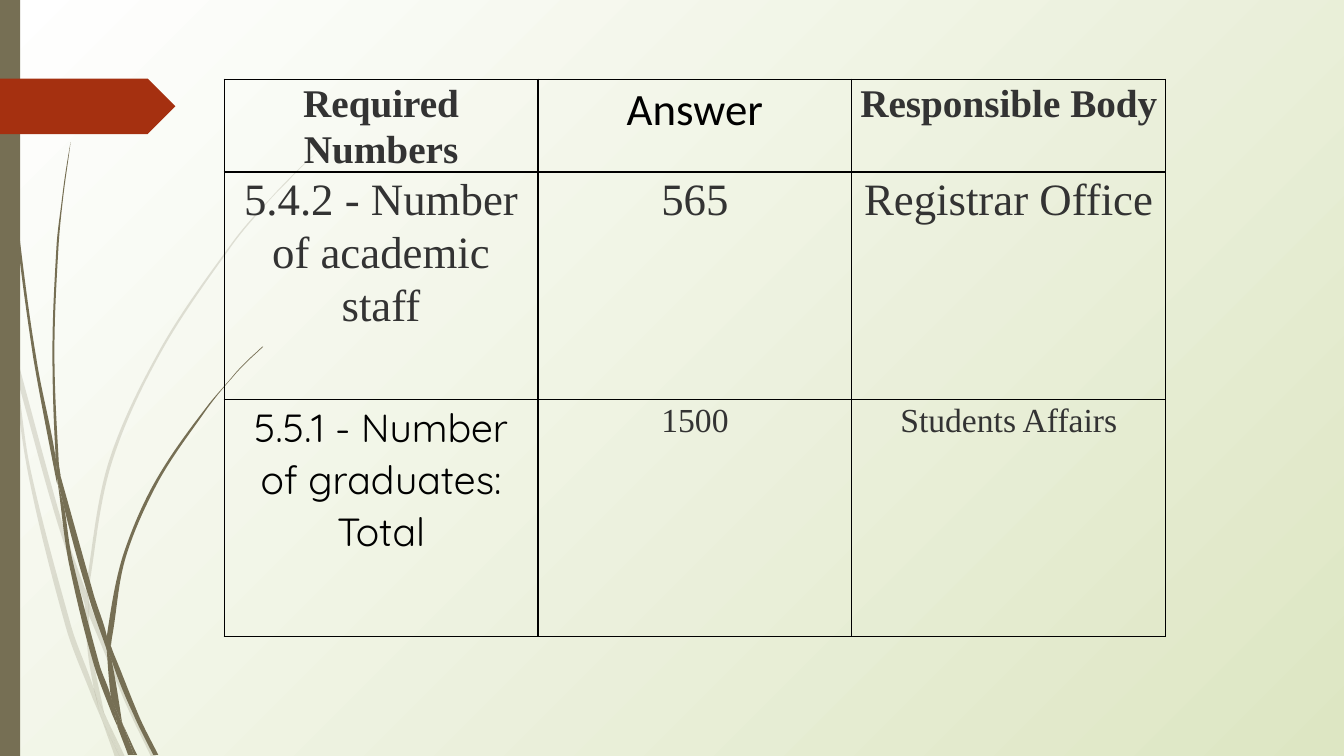
from dataclasses import dataclass

import lxml.etree
import pptx
import pptx.dml.color
import pptx.enum.shapes
import pptx.enum.text
import pptx.oxml
import pptx.oxml.ns
import pptx.util

# The slide is a grid of 1333 by 750 square cells; every length is in cells.
COLUMNS, ROWS = 1333, 750
CELL = pptx.util.Inches(0.01)
qn = pptx.oxml.ns.qn


@dataclass(frozen=True)
class Theme:
    olive: str = "766F54"
    rust: str = "A53010"
    black: str = "000000"
    ink: str = "333333"
    glow: str = "FFFFFF"
    meadow: str = "DDE6C3"
    serif: str = "Times New Roman"
    sans: str = "Calibri"
    rounded: str = "Quicksand"
    large: int = 32
    medium: int = 28
    small: int = 24
    rule: int = 1
    leading: float = 1.07
    faint: int = 20


THEME = Theme()
HEADING = (THEME.serif, THEME.medium, THEME.ink, True)
ANSWER_HEADING = (THEME.sans, THEME.large, THEME.black, False)
STAFF = (THEME.serif, THEME.large, THEME.ink, False)
GRADUATES = (THEME.rounded, THEME.medium, THEME.black, False)
GRADUATES_DETAIL = (THEME.serif, THEME.small, THEME.ink, False)

NUMBERS = [
    [("Required Numbers", HEADING), ("Answer", ANSWER_HEADING),
     ("Responsible Body", HEADING)],
    [("5.4.2 - Number of academic staff", STAFF), ("565", STAFF),
     ("Registrar Office", STAFF)],
    [("5.5.1 - Number of graduates: Total", GRADUATES),
     ("1500", GRADUATES_DETAIL), ("Students Affairs", GRADUATES_DETAIL)],
]
ROW_HEIGHTS = (65, 226, 235)

# Each blade of grass has two edges, both running from its top to its foot.
FAINT_BLADES = [
    ([(0, 282), (9, 322), (11, 350)], [(0, 299), (10, 344), (11, 350)]),
    ([(14, 345), (62, 520), (85, 586)], [(17, 376), (58, 522), (84, 599)]),
    ([(88, 596), (92, 607), (127, 692), (155, 751)],
     [(88, 610), (123, 694), (150, 751)]),
    ([(105, 711), (124, 751)], [(105, 711), (119, 751)]),
    ([(11, 350), (17, 376), (31, 469), (70, 619), (93, 683), (99, 707), (101, 714)],
     [(11, 350), (28, 470), (65, 621), (92, 693), (101, 714)]),
    ([(84, 599), (88, 608), (88, 610), (91, 646), (103, 706), (105, 711)],
     [(84, 599), (87, 646), (93, 683), (96, 692), (105, 711)]),
    ([(312, 153), (290, 175), (268, 198), (229, 245), (160, 349), (110, 462),
      (88, 584), (88, 596)],
     [(312, 153), (289, 175), (268, 197), (228, 244), (158, 348), (107, 461),
      (85, 584), (85, 586)]),
    ([(101, 714), (119, 751)], [(101, 714), (114, 751)]),
    ([(85, 586), (88, 596), (88, 610)], [(84, 599), (88, 608)]),
    ([(93, 683), (96, 692), (105, 711), (119, 751)],
     [(93, 683), (99, 707), (101, 714), (119, 751)]),
]
DARK_BLADES = [
    ([(4, 0), (5, 48), (8, 109), (19, 232), (36, 355), (55, 453), (57, 481)],
     [(3, 0), (4, 48), (7, 110), (17, 233), (33, 355), (56, 477), (57, 481)]),
    ([(60, 472), (93, 590), (106, 631), (106, 645)],
     [(60, 472), (64, 505), (88, 592), (106, 645)]),
    ([(110, 641), (113, 649), (136, 706), (157, 749)],
     [(110, 641), (111, 656), (132, 708), (152, 749)]),
    ([(57, 477), (64, 505), (72, 556), (98, 657), (110, 691), (116, 717), (117, 722)],
     [(57, 477), (68, 557), (93, 659), (111, 708), (117, 722)]),
    ([(70, 141), (63, 193), (58, 245), (54, 349), (58, 453), (60, 472)],
     [(70, 141), (62, 193), (56, 245), (52, 349), (55, 449), (60, 472)]),
    ([(122, 719), (136, 749)], [(122, 719), (133, 749)]),
    ([(55, 449), (60, 472), (64, 505)], [(55, 449), (55, 453), (57, 477), (64, 505)]),
    ([(261, 344), (245, 359), (231, 374), (205, 406), (158, 476), (125, 552),
      (111, 633), (110, 641)],
     [(260, 344), (245, 358), (231, 373), (204, 405), (156, 474), (122, 551),
      (106, 631), (110, 641)]),
    ([(117, 722), (131, 749)], [(117, 722), (127, 749)]),
    ([(106, 645), (109, 651), (111, 656), (121, 716), (122, 719)],
     [(106, 645), (110, 691), (116, 706), (122, 719)]),
    ([(106, 631), (110, 641), (111, 656)],
     [(106, 631), (106, 645), (109, 651), (111, 656)]),
    ([(110, 691), (116, 706), (122, 719), (133, 749)],
     [(110, 691), (116, 717), (117, 722), (130, 749)]),
]


def rgb(value):
    return pptx.dml.color.RGBColor.from_string(value)


def paint(shape, color, alpha=100):
    shape.shadow.inherit = False
    shape.fill.solid()
    shape.fill.fore_color.rgb = rgb(color)
    shape.line.fill.background()
    if alpha < 100:
        tint = shape.fill._xPr.find(".//" + qn("a:srgbClr"))
        lxml.etree.SubElement(tint, qn("a:alpha"), val=str(alpha * 1000))


def add_background(slide):
    """White glow in the top left corner, spreading out to meadow green."""
    fill = slide.background.fill
    fill.gradient()
    for stop, color in zip(fill.gradient_stops, (THEME.glow, THEME.meadow)):
        stop.color.rgb = rgb(color)
    gradient = slide.background._cSld.find(".//" + qn("a:gradFill"))
    gradient.remove(gradient.find(qn("a:lin")))
    circle = lxml.etree.SubElement(gradient, qn("a:path"), path="circle")
    lxml.etree.SubElement(circle, qn("a:fillToRect"), r="100000", b="100000")


def curve(edge):
    """Two handles and an end point for each step along a smooth edge."""
    knots = [complex(*point) for point in edge]
    padded = [knots[0], *knots, knots[-1]]
    headings = [(b - a) / abs(b - a) for a, b in zip(padded, padded[2:])]
    for i, (start, end) in enumerate(zip(knots, knots[1:])):
        reach = abs(end - start) / 3
        for point in (start + headings[i] * reach, end - headings[i + 1] * reach, end):
            yield point.real, point.imag


def add_blade(slide, edges, alpha):
    right, left = edges
    outline = [*curve(right), *[left[-1]] * 3, *curve(left[::-1])]
    builder = slide.shapes.build_freeform(*right[0], scale=CELL)
    builder.add_line_segments(outline, close=True)
    blade = builder.convert_to_shape()
    steps = list(blade._element.iter(qn("a:lnTo")))
    for i in range(0, len(steps) - 2, 3):
        bend = lxml.etree.Element(qn("a:cubicBezTo"))
        steps[i].addprevious(bend)
        for step in steps[i:i + 3]:
            bend.append(step[0])
            step.getparent().remove(step)
    paint(blade, THEME.olive, alpha)


def add_block(slide, preset, box, color):
    paint(slide.shapes.add_shape(preset, *(CELL * side for side in box)), color)


def add_borders(cell):
    properties = cell._tc.get_or_add_tcPr()
    for position, side in enumerate(("a:lnL", "a:lnR", "a:lnT", "a:lnB")):
        properties.insert(position, pptx.oxml.parse_xml(
            f'<{side} {pptx.oxml.ns.nsdecls("a")} w="{pptx.util.Pt(THEME.rule)}">'
            f'<a:solidFill><a:srgbClr val="{THEME.black}"/></a:solidFill></{side}>'))


def fill_cell(cell, wording, style):
    cell.fill.background()
    cell.margin_left = cell.margin_right = CELL * 7
    cell.margin_top = cell.margin_bottom = 0
    add_borders(cell)
    paragraph = cell.text_frame.paragraphs[0]
    paragraph.alignment = pptx.enum.text.PP_ALIGN.CENTER
    paragraph.line_spacing = THEME.leading
    run = paragraph.add_run()
    run.text = wording
    font = run.font
    font.name, size, color, font.bold = style
    font.size = pptx.util.Pt(size)
    font.color.rgb = rgb(color)


def add_numbers_table(slide, left, top, width):
    box = (left, top, width, sum(ROW_HEIGHTS))
    table = slide.shapes.add_table(
        len(NUMBERS), len(NUMBERS[0]), *(int(CELL * side) for side in box)).table
    table.first_row = table.horz_banding = False
    for row, height, entries in zip(table.rows, ROW_HEIGHTS, NUMBERS):
        row.height = CELL * height
        for cell, (wording, style) in zip(row.cells, entries):
            fill_cell(cell, wording, style)


def main():
    presentation = pptx.Presentation()
    presentation.slide_width = CELL * COLUMNS
    presentation.slide_height = CELL * ROWS
    slide = presentation.slides.add_slide(presentation.slide_layouts[6])
    presets = pptx.enum.shapes.MSO_SHAPE
    add_background(slide)
    for blades, alpha in ((FAINT_BLADES, THEME.faint), (DARK_BLADES, 100)):
        for edges in blades:
            add_blade(slide, edges, alpha)
    add_block(slide, presets.RECTANGLE, (0, 0, 20, ROWS), THEME.olive)
    add_block(slide, presets.PENTAGON, (0, 78, 174, 55), THEME.rust)
    add_numbers_table(slide, 222.3, 78.5, 934)
    presentation.save("out.pptx")


if __name__ == "__main__":
    main()
